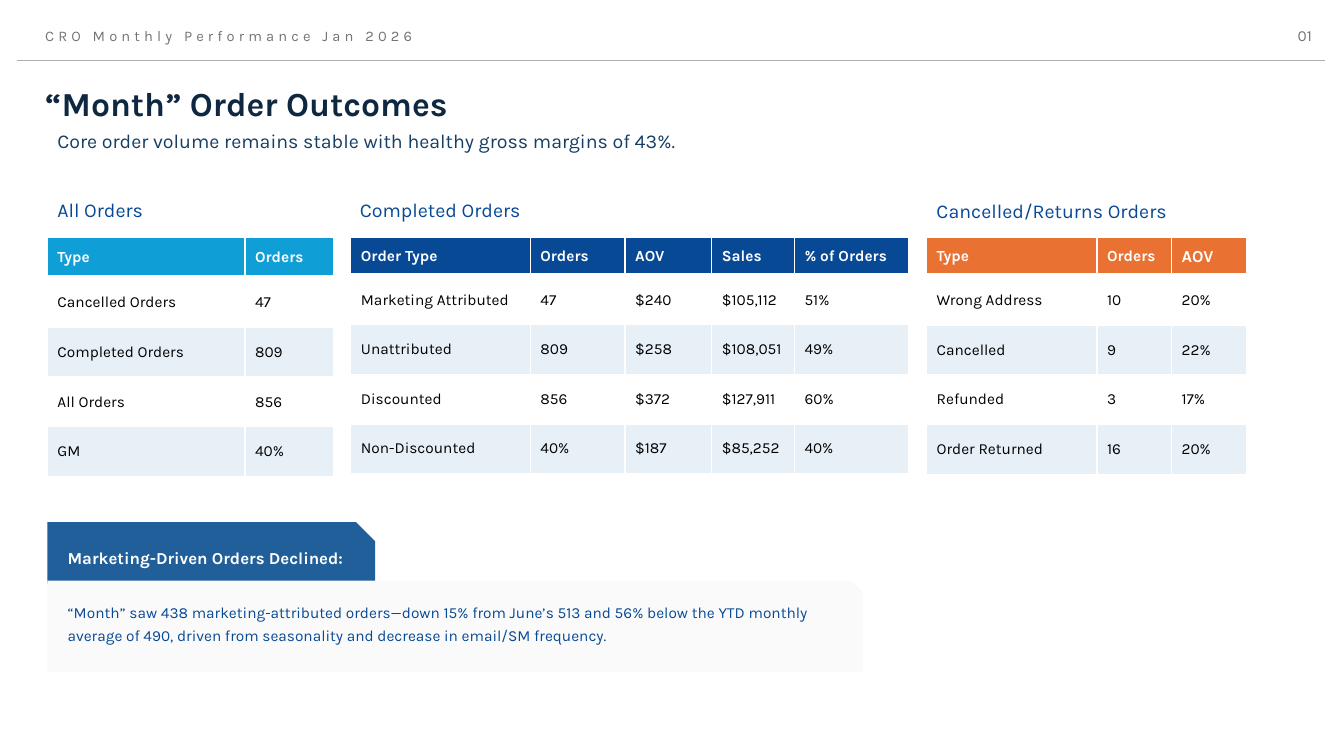
from pptx import Presentation
from pptx.dml.color import RGBColor
from pptx.enum.shapes import MSO_CONNECTOR as Connector, MSO_SHAPE as Shape
from pptx.enum.text import MSO_ANCHOR as Anchor, PP_ALIGN as Align
from pptx.oxml.ns import qn
from pptx.util import Inches, Pt
from lxml.etree import SubElement

FONT = "Karla"
COLORS = {
    "white": "FFFFFF", "black": "000000", "navy": "0E2841", "subtitle": "163E64",
    "gray": "747474", "rule": "AEAEAE", "cyan": "0F9ED5", "blue": "074995",
    "orange": "E97132", "band": "E7F0F7", "tab": "215F9A", "panel": "FAFAFA",
}

# Text boxes: text, (left, top, width, height), size, color, options
HEADINGS = [
    ("“Month” Order Outcomes", (0.35, 0.82, 5.8, 0.46), 24, "navy",
     {"bold": True, "anchor": Anchor.BOTTOM, "line_spacing": 0.9}),
    ("Core order volume remains stable with healthy gross margins of 43%.",
     (0.47, 1.23, 9.12, 0.34), 14, "subtitle", {}),
    ("CRO Monthly Performance Jan 2026", (0.35, 0.22, 4.2, 0.27), 10.5, "gray",
     {"anchor": Anchor.BOTTOM, "line_spacing": 0.9, "tracking": 3}),
    ("01", (12.7, 0.22, 0.41, 0.27), 11, "gray",
     {"anchor": Anchor.BOTTOM, "line_spacing": 0.9, "align": Align.RIGHT}),
]

TABLE_TOP = 2.36
TABLES = [
    {"title": "All Orders", "title_at": (0.47, 1.91), "left": 0.47, "color": "cyan",
     "height": 2.37, "header_height": 0.39, "widths": [1.96, 0.88],
     "header_sizes": [11, 11],
     "rows": [("Type", "Orders"),
              ("Cancelled Orders", "47"),
              ("Completed Orders", "809"),
              ("All Orders", "856"),
              ("GM", "40%")]},
    {"title": "Completed Orders", "title_at": (3.47, 1.91), "left": 3.48, "color": "blue",
     "height": 2.34, "header_height": 0.37, "widths": [1.78, 0.94, 0.86, 0.82, 1.13],
     "header_sizes": [11] * 5,
     "rows": [("Order Type", "Orders", "AOV", "Sales", "% of Orders"),
              ("Marketing Attributed", "47", "$240", "$105,112", "51%"),
              ("Unattributed", "809", "$258", "$108,051", "49%"),
              ("Discounted", "856", "$372", "$127,911", "60%"),
              ("Non-Discounted", "40%", "$187", "$85,252", "40%")]},
    {"title": "Cancelled/Returns Orders", "title_at": (9.19, 1.92), "left": 9.19,
     "color": "orange", "height": 2.35, "header_height": 0.37,
     "widths": [1.69, 0.74, 0.74], "header_sizes": [11, 11, 12],
     "rows": [("Type", "Orders", "AOV"),
              ("Wrong Address", "10", "20%"),
              ("Cancelled", "9", "22%"),
              ("Refunded", "3", "17%"),
              ("Order Returned", "16", "20%")]},
]

# Callout: text, box, corner, fill, text color, size, bold, anchor, top inset
CALLOUT = [
    ("Marketing-Driven Orders Declined:", (0.47, 5.18, 3.25, 0.61), 0.31,
     "tab", "white", 12, True, Anchor.MIDDLE, 0),
    ("“Month” saw 438 marketing-attributed orders—down 15% from June’s 513 and 56% "
     "below the YTD monthly average of 490, driven from seasonality and decrease in "
     "email/SM frequency.", (0.47, 5.76, 8.09, 0.91), 0.13,
     "panel", "blue", 11, False, Anchor.TOP, 0.12),
]


def rgb(name):
    return RGBColor.from_string(COLORS[name])


def inches(values):
    return [Inches(value) for value in values]


def write(text_frame, text, size, color, bold=False, align=Align.LEFT,
          line_spacing=None, tracking=None):
    text_frame.text = text
    paragraph = text_frame.paragraphs[0]
    paragraph.alignment = align
    if line_spacing:
        paragraph.line_spacing = line_spacing
    run = paragraph.runs[0]
    run.font.name, run.font.size, run.font.bold = FONT, Pt(size), bold
    run.font.color.rgb = rgb(color)
    if tracking:
        run.font._element.set("spc", str(tracking * 100))


def add_text(slide, text, box, size, color, anchor=Anchor.TOP, **style):
    text_frame = slide.shapes.add_textbox(*inches(box)).text_frame
    text_frame.word_wrap = True
    text_frame.vertical_anchor = anchor
    write(text_frame, text, size, color, **style)


def add_borders(cell, bottom_width):
    properties = cell._tc.get_or_add_tcPr()
    for side, width in (("L", 1), ("R", 1), ("T", 1), ("B", bottom_width)):
        line = SubElement(properties, qn(f"a:ln{side}"), w=str(Pt(width)))
        fill = SubElement(line, qn("a:solidFill"))
        SubElement(fill, qn("a:srgbClr"), val=COLORS["white"])


def add_order_table(slide, data):
    rows, widths = data["rows"], data["widths"]
    body_count = len(rows) - 1
    body_height = (data["height"] - data["header_height"]) / body_count
    heights = [data["header_height"]] + [body_height] * body_count
    box = (data["left"], TABLE_TOP, sum(widths), data["height"])
    table = slide.shapes.add_table(len(rows), len(widths), *inches(box)).table
    for column, width in zip(table.columns, widths):
        column.width = Inches(width)
    for row, height in zip(table.rows, heights):
        row.height = Inches(height)
    for r, values in enumerate(rows):
        header = r == 0
        fill = data["color"] if header else ("white" if r % 2 else "band")
        for c, value in enumerate(values):
            cell = table.cell(r, c)
            add_borders(cell, 3 if header else 1)
            cell.fill.solid()
            cell.fill.fore_color.rgb = rgb(fill)
            cell.vertical_anchor = Anchor.MIDDLE
            write(cell.text_frame, value, data["header_sizes"][c] if header else 11,
                  "white" if header else "black", bold=header)


def add_callout(slide, text, box, corner, fill, color, size, bold, anchor, top_inset):
    shape = slide.shapes.add_shape(Shape.SNIP_1_RECTANGLE, *inches(box))
    shape.adjustments[0] = corner
    shape.shadow.inherit = False
    shape.fill.solid()
    shape.fill.fore_color.rgb = rgb(fill)
    shape.line.fill.background()
    text_frame = shape.text_frame
    text_frame.word_wrap = True
    text_frame.vertical_anchor = anchor
    text_frame.margin_left, text_frame.margin_top = inches((0.2, top_inset))
    text_frame.margin_right, text_frame.margin_bottom = inches((0.12, 0.05))
    write(text_frame, text, size, color, bold=bold, line_spacing=1.25)
    text_frame.paragraphs[0].space_after = Pt(6)


def main():
    presentation = Presentation()
    presentation.slide_width, presentation.slide_height = inches((13.33, 7.5))
    slide = presentation.slides.add_slide(presentation.slide_layouts[6])

    # Header and title
    for text, box, size, color, style in HEADINGS:
        add_text(slide, text, box, size, color, **style)
    rule = slide.shapes.add_connector(Connector.STRAIGHT, *inches((0.17, 0.6, 13.14, 0.6)))
    rule.line.color.rgb = rgb("rule")
    rule.line.width = Pt(0.75)
    SubElement(rule._element.spPr, qn("a:effectLst"))

    # Order tables with their titles
    for data in TABLES:
        add_order_table(slide, data)
        add_text(slide, data["title"], (*data["title_at"], 2.84, 0.34), 14, "blue")

    # Callout tab and panel
    for part in CALLOUT:
        add_callout(slide, *part)

    presentation.save("out.pptx")


if __name__ == "__main__":
    main()
